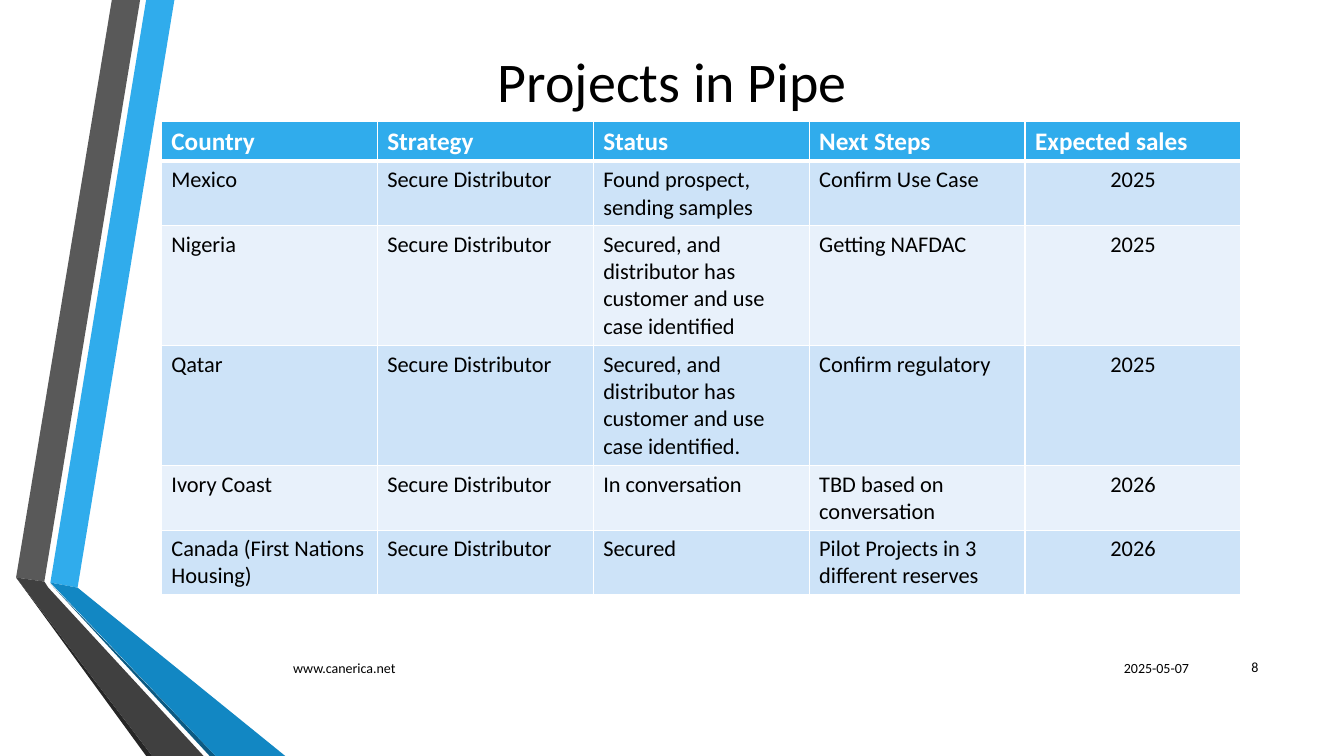
from lxml.etree import SubElement
from pptx import Presentation
from pptx.dml.color import RGBColor
from pptx.enum.text import MSO_ANCHOR as Anchor, PP_ALIGN as Align
from pptx.oxml.ns import qn
from pptx.util import Inches, Pt

FONT = "Calibri"
BLACK = RGBColor(0x00, 0x00, 0x00)
WHITE = RGBColor(0xFF, 0xFF, 0xFF)
SKY = RGBColor(0x30, 0xAC, 0xEC)
BLUE = RGBColor(0x12, 0x87, 0xC3)
NAVY = RGBColor(0x0C, 0x5A, 0x82)
GREY = RGBColor(0x59, 0x59, 0x59)
DARK = RGBColor(0x40, 0x40, 0x40)
COAL = RGBColor(0x26, 0x26, 0x26)
BANDS = [RGBColor(0xCD, 0xE3, 0xF8), RGBColor(0xE8, 0xF1, 0xFB)]

# Ribbon pieces: colour and corners, back to front
RIBBONS = [
    (SKY, [(0.5, 5.78), (0.77, 5.83), (1.73, 0), (1.45, 0)]),
    (GREY, [(1.39, 0), (1.11, 0), (0.16, 5.73), (0.44, 5.77)]),
    (COAL, [(0.16, 5.73), (1.45, 7.5), (1.51, 7.5)]),
    (NAVY, [(0.5, 5.79), (2.08, 7.5), (2.14, 7.5)]),
    (BLUE, [(0.5, 5.78), (2.14, 7.5), (2.83, 7.5), (0.77, 5.83)]),
    (DARK, [(2.02, 7.5), (0.48, 5.83), (0.44, 5.77), (0.16, 5.73), (1.51, 7.5)]),
]

# Text boxes: words, left, top, width, height, size, alignment
TEXTS = [
    ("Projects in Pipe", 0.92, 0.07, 11.5, 1.45, 40, Align.CENTER),
    ("2025-05-07", 10.64, 6.43, 1.25, 0.4, 10, Align.RIGHT),
    ("www.canerica.net", 2.81, 6.43, 7.75, 0.4, 10, Align.LEFT),
    ("8", 11.98, 6.42, 0.6, 0.4, 10, Align.RIGHT),
]

# Table
HEADS = ["Country", "Strategy", "Status", "Next Steps", "Expected sales"]
PLAN = "Secure Distributor"
USE = "Secured, and distributor has customer and use case identified"
ROWS = [
    HEADS,
    ["Mexico", PLAN, "Found prospect, sending samples", "Confirm Use Case", "2025"],
    ["Nigeria", PLAN, USE, "Getting NAFDAC", "2025"],
    ["Qatar", PLAN, USE + ".", "Confirm regulatory", "2025"],
    ["Ivory Coast", PLAN, "In conversation", "TBD based on conversation", "2026"],
    ["Canada (First Nations Housing)", PLAN, "Secured",
     "Pilot Projects in 3 different reserves", "2026"],
]
TALLS = [0.39, 0.64, 1.19, 1.19, 0.64, 0.64]
LEFT, TOP, WIDE = 1.6, 1.2, 10.71


def style(para, size, color, align, bold=False):
    para.alignment = align
    font = para.runs[0].font
    font.name, font.size, font.bold = FONT, Pt(size), bold
    font.color.rgb = color


def add_ribbon(slide, color, points):
    spots = [(Inches(x), Inches(y)) for x, y in points]
    pen = slide.shapes.build_freeform(*spots[0])
    pen.add_line_segments(spots[1:], close=True)
    shape = pen.convert_to_shape()
    shape.shadow.inherit = False
    shape.fill.solid()
    shape.fill.fore_color.rgb = color
    shape.line.fill.background()


def add_text(slide, text, left, top, width, height, size, align):
    box = slide.shapes.add_textbox(*map(Inches, (left, top, width, height)))
    frame = box.text_frame
    frame.word_wrap = True
    frame.vertical_anchor = Anchor.MIDDLE
    frame.text = text
    style(frame.paragraphs[0], size, BLACK, align)


def add_edges(cell, top, bottom):
    props = cell._tc.get_or_add_tcPr()
    for side, width in (("L", 1), ("R", 1), ("T", top), ("B", bottom)):
        line = SubElement(props, qn("a:ln" + side), w=str(Pt(width)))
        fill = SubElement(line, qn("a:solidFill"))
        SubElement(fill, qn("a:srgbClr"), val=str(WHITE))


def add_grid(slide):
    size = map(Inches, (LEFT, TOP, WIDE, sum(TALLS)))
    table = slide.shapes.add_table(len(ROWS), len(HEADS), *size).table
    for col in table.columns:
        col.width = Inches(WIDE / len(HEADS))
    for r, row in enumerate(ROWS):
        table.rows[r].height = Inches(TALLS[r])
        head = r == 0
        for c, text in enumerate(row):
            cell = table.cell(r, c)
            add_edges(cell, 3 if r == 1 else 1, 3 if head else 1)
            cell.fill.solid()
            cell.fill.fore_color.rgb = SKY if head else BANDS[(r - 1) % 2]
            cell.text_frame.text = text
            last = c == len(HEADS) - 1
            align = Align.CENTER if last and not head else Align.LEFT
            style(cell.text_frame.paragraphs[0], 18 if head else 16,
                  WHITE if head else BLACK, align, head)


def main():
    deck = Presentation()
    deck.slide_width, deck.slide_height = Inches(13.33), Inches(7.5)
    slide = deck.slides.add_slide(deck.slide_layouts[6])
    for ribbon in RIBBONS:
        add_ribbon(slide, *ribbon)
    for item in TEXTS:
        add_text(slide, *item)
    add_grid(slide)
    deck.save("out.pptx")


if __name__ == "__main__":
    main()
